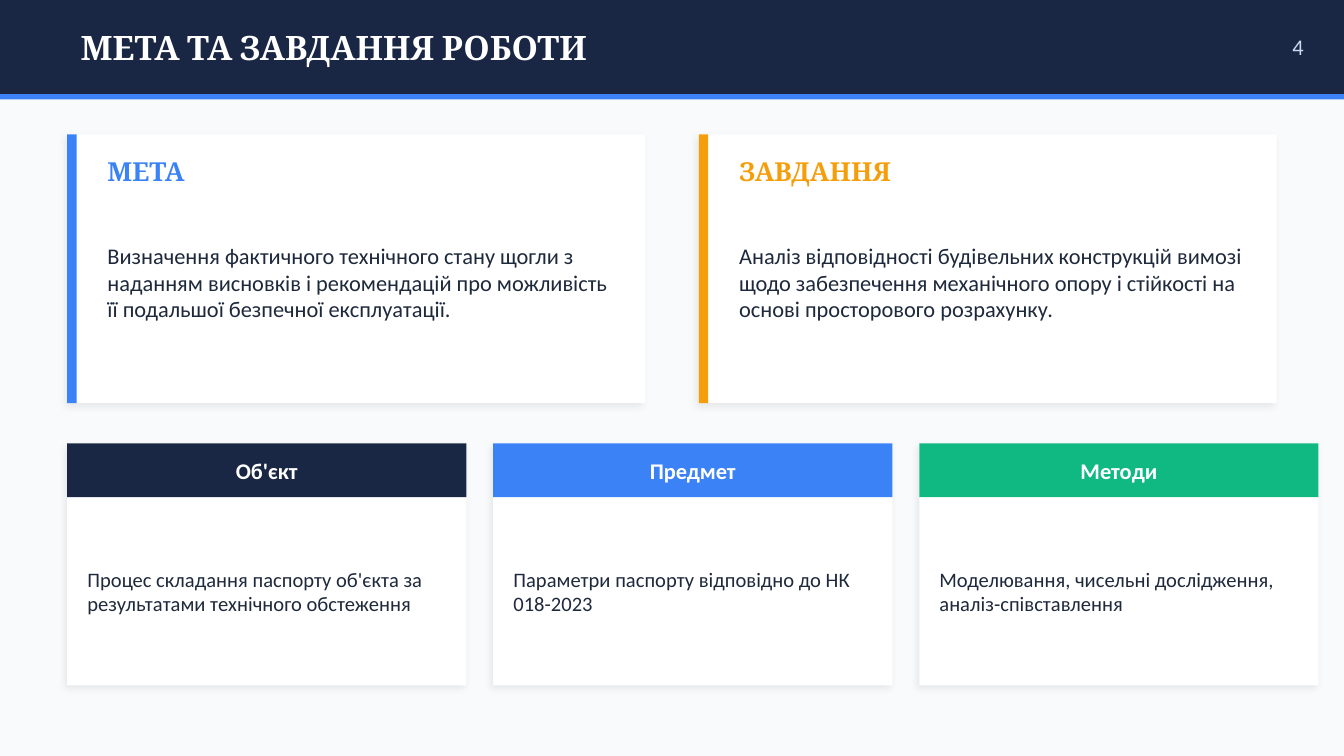
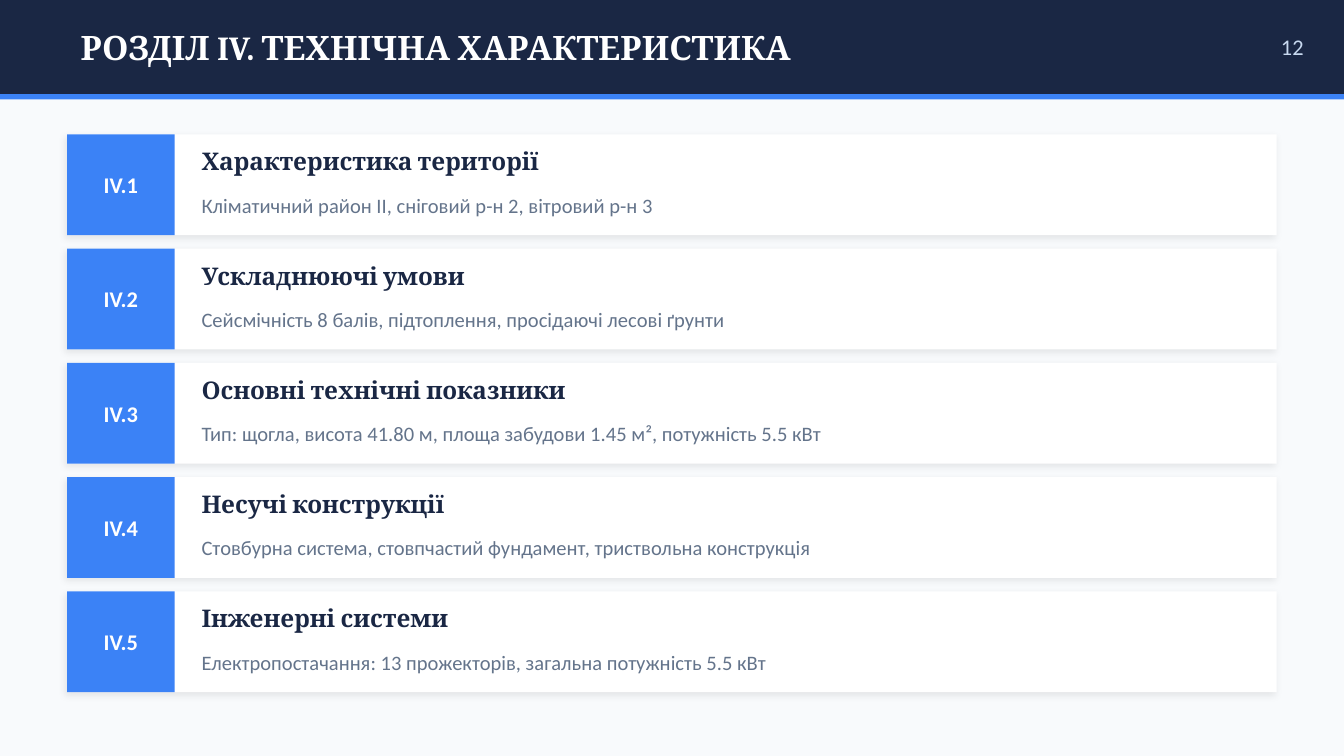
from lxml import etree
from pptx import Presentation
from pptx.dml.color import RGBColor
from pptx.enum import shapes, text
from pptx.oxml import ns
from pptx.util import Inches, Pt

NAVY = RGBColor(0x1A, 0x27, 0x44)
BLUE = RGBColor(0x3B, 0x82, 0xF6)
ORANGE = RGBColor(0xF5, 0x9E, 0x0B)
GREEN = RGBColor(0x10, 0xB9, 0x81)
WHITE = RGBColor(0xFF, 0xFF, 0xFF)
PAPER = RGBColor(0xF8, 0xFA, 0xFC)
INK = RGBColor(0x1E, 0x29, 0x3B)
SLATE = RGBColor(0x64, 0x74, 0x8B)
PALE = RGBColor(0xC8, 0xD9, 0xF0)

HEAD, BODY = "Cambria", "Calibri"
LEFT, CENTER, RIGHT = text.PP_ALIGN.LEFT, text.PP_ALIGN.CENTER, text.PP_ALIGN.RIGHT
MARGIN = 0.5

GOALS = [
    ("МЕТА", BLUE,
     "Визначення фактичного технічного стану щогли з наданням висновків і "
     "рекомендацій про можливість її подальшої безпечної експлуатації."),
    ("ЗАВДАННЯ", ORANGE,
     "Аналіз відповідності будівельних конструкцій вимозі щодо забезпечення "
     "механічного опору і стійкості на основі просторового розрахунку."),
]
ASPECTS = [
    ("Об'єкт", NAVY, "Процес складання паспорту об'єкта за результатами технічного обстеження"),
    ("Предмет", BLUE, "Параметри паспорту відповідно до НК 018-2023"),
    ("Методи", GREEN, "Моделювання, чисельні дослідження, аналіз-співставлення"),
]
SECTIONS = [
    ("Характеристика території", "Кліматичний район ІІ, сніговий р-н 2, вітровий р-н 3"),
    ("Ускладнюючі умови", "Сейсмічність 8 балів, підтоплення, просідаючі лесові ґрунти"),
    ("Основні технічні показники",
     "Тип: щогла, висота 41.80 м, площа забудови 1.45 м², потужність 5.5 кВт"),
    ("Несучі конструкції", "Стовбурна система, стовпчастий фундамент, триствольна конструкція"),
    ("Інженерні системи", "Електропостачання: 13 прожекторів, загальна потужність 5.5 кВт"),
]


def write(sp, content, size=12, font=BODY, color=INK, bold=False, align=LEFT):
    """Fill a shape or text box with one vertically centred paragraph."""
    tf = sp.text_frame
    tf.word_wrap = True
    tf.vertical_anchor = text.MSO_ANCHOR.MIDDLE
    tf.margin_left = tf.margin_top = tf.margin_right = tf.margin_bottom = 0
    p = tf.paragraphs[0]
    p.alignment = align
    r = p.add_run()
    r.text = content
    r.font.size, r.font.name, r.font.bold = Pt(size), font, bold
    r.font.color.rgb = color


def add_text(s, x, y, w, h, content, **fmt):
    write(s.shapes.add_textbox(Inches(x), Inches(y), Inches(w), Inches(h)), content, **fmt)


def add_rect(s, x, y, w, h, color):
    sp = s.shapes.add_shape(shapes.MSO_SHAPE.RECTANGLE,
                            Inches(x), Inches(y), Inches(w), Inches(h))
    sp.shadow.inherit = False
    sp.fill.solid()
    sp.fill.fore_color.rgb = color
    sp.line.fill.background()
    return sp


def add_label(s, x, y, w, h, content, color):
    """Coloured block with a bold white centred caption."""
    write(add_rect(s, x, y, w, h, color), content, color=WHITE, bold=True, align=CENTER)


def add_card(s, x, y, w, h):
    """White panel with a soft shadow."""
    sp = add_rect(s, x, y, w, h, WHITE)
    effects = sp.element.spPr.find(ns.qn("a:effectLst"))
    shadow = etree.SubElement(effects, ns.qn("a:outerShdw"), blurRad=str(Pt(4)),
                              dist=str(Pt(2)), dir=str(135 * 60000),
                              algn="bl", rotWithShape="0")
    color = etree.SubElement(shadow, ns.qn("a:srgbClr"), val="000000")
    etree.SubElement(color, ns.qn("a:alpha"), val="8000")


def add_slide(prs, title, number):
    """Slide with the shared background, title band and page number."""
    s = prs.slides.add_slide(prs.slide_layouts[6])
    s.background.fill.solid()
    s.background.fill.fore_color.rgb = PAPER
    add_rect(s, 0, 0, 10, 0.7, NAVY)
    add_text(s, 0.6, 0.1, 8.5, 0.5, title, size=18, font=HEAD, color=WHITE, bold=True)
    add_text(s, 9.2, 0.1, 0.5, 0.5, str(number), color=PALE, align=RIGHT)
    add_rect(s, 0, 0.7, 10, 0.04, BLUE)
    return s


def add_goal(s, x, y, title, color, content):
    add_card(s, x, y, 4.3, 2)
    add_rect(s, x, y, 0.07, 2, color)
    add_text(s, x + 0.3, y + 0.1, 3.8, 0.35, title, size=14, font=HEAD, color=color, bold=True)
    add_text(s, x + 0.3, y + 0.5, 3.8, 1.2, content)


def add_aspect(s, x, y, w, title, color, content):
    add_card(s, x, y, w, 1.8)
    add_label(s, x, y, w, 0.4, title, color)
    add_text(s, x + 0.15, y + 0.5, w - 0.3, 1.2, content, size=11)


def add_section(s, y, number, title, details):
    add_card(s, MARGIN, y, 9, 0.75)
    add_label(s, MARGIN, y, 0.8, 0.75, number, BLUE)
    add_text(s, 1.5, y + 0.05, 7.8, 0.3, title, size=13, font=HEAD, color=NAVY, bold=True)
    add_text(s, 1.5, y + 0.35, 7.8, 0.35, details, size=11, color=SLATE)


def main():
    prs = Presentation()
    prs.slide_width, prs.slide_height = Inches(10), Inches(10 * 9 / 16)

    s = add_slide(prs, "МЕТА ТА ЗАВДАННЯ РОБОТИ", 4)
    for i, goal in enumerate(GOALS):
        add_goal(s, MARGIN + i * 4.7, 1, *goal)
    width, gap = 2.97, 0.2
    for i, aspect in enumerate(ASPECTS):
        add_aspect(s, MARGIN + i * (width + gap), 3.3, width, *aspect)

    s = add_slide(prs, "РОЗДІЛ IV. ТЕХНІЧНА ХАРАКТЕРИСТИКА", 12)
    for i, section in enumerate(SECTIONS):
        add_section(s, 1 + i * 0.85, f"IV.{i + 1}", *section)

    prs.save("out.pptx")


if __name__ == "__main__":
    main()
